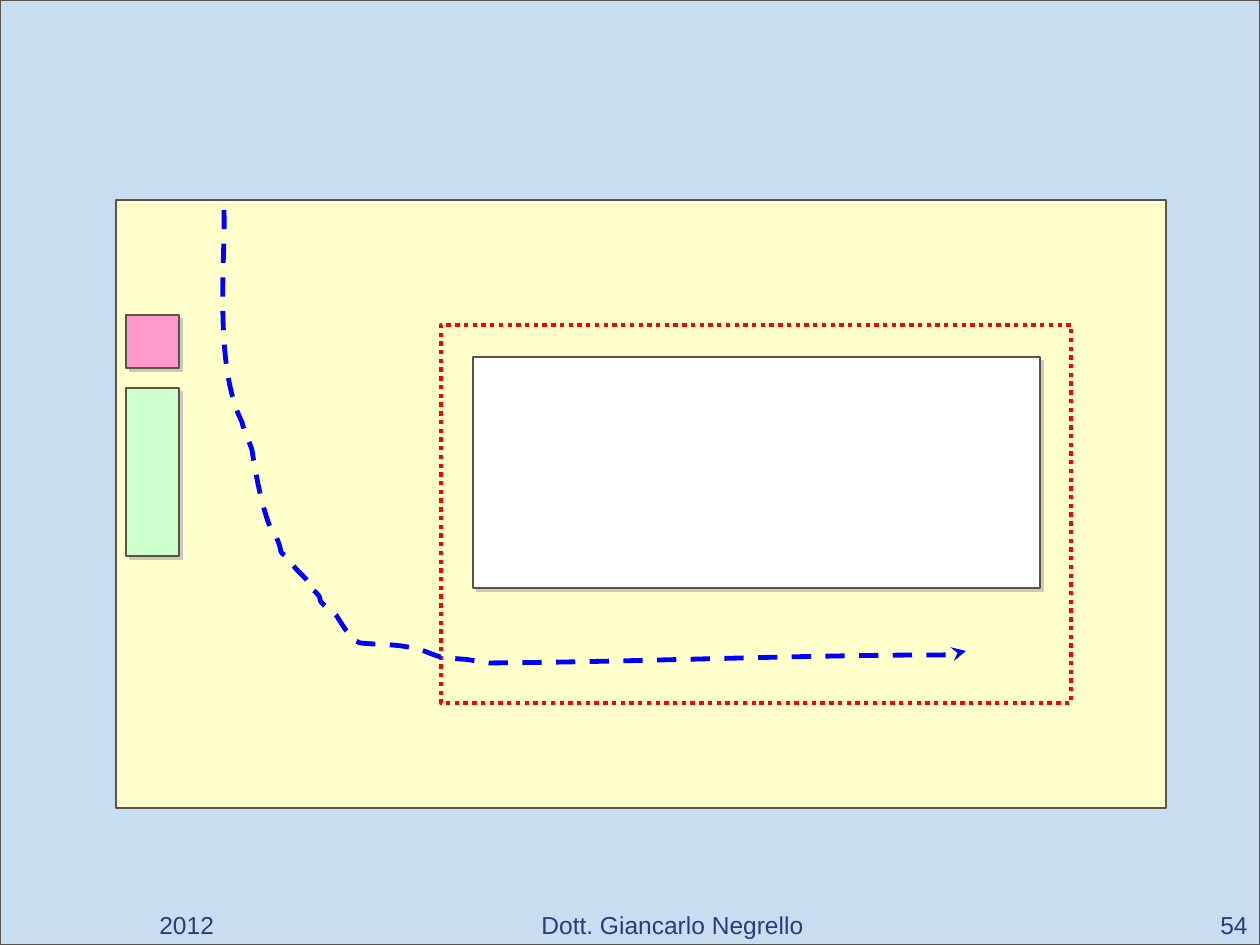
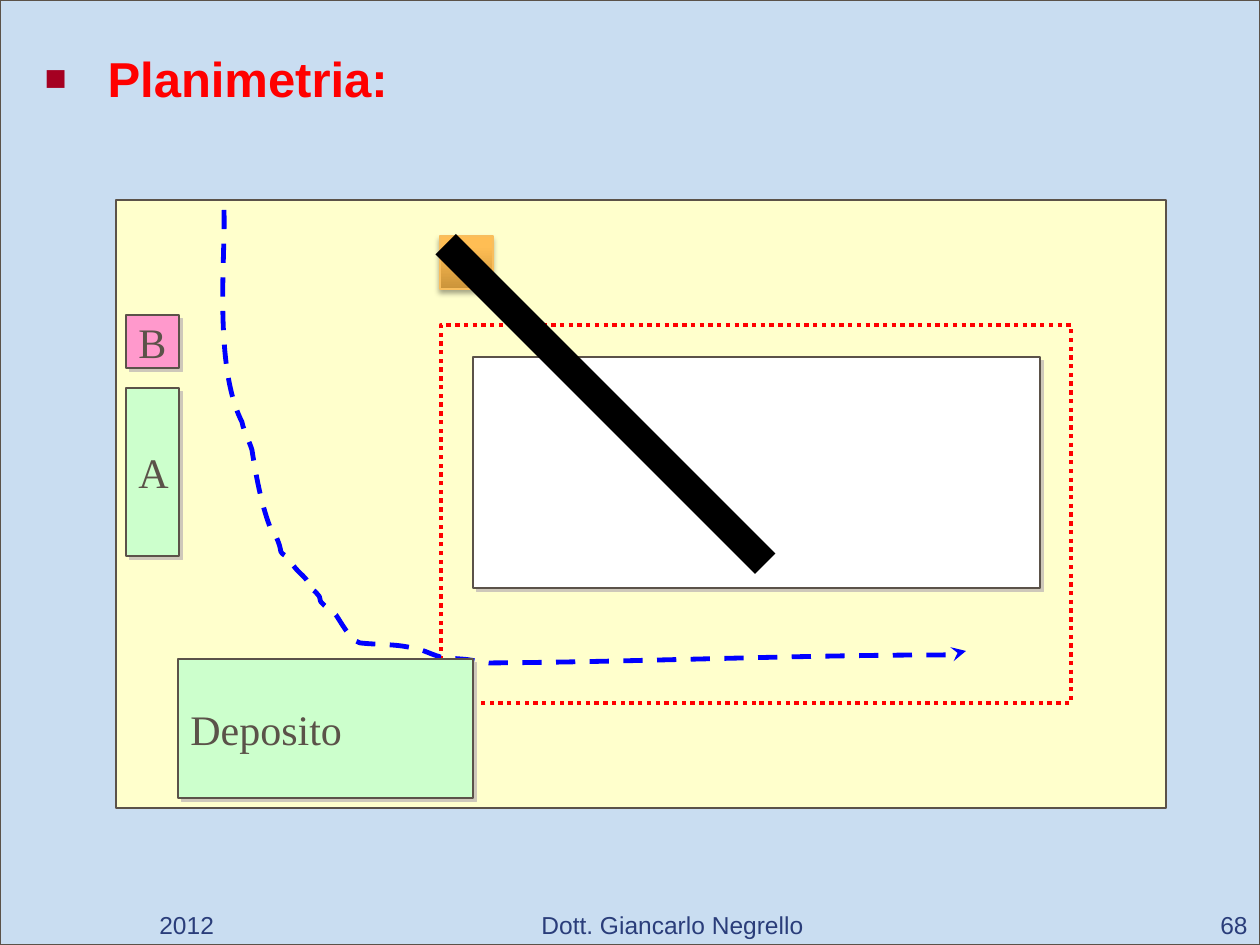
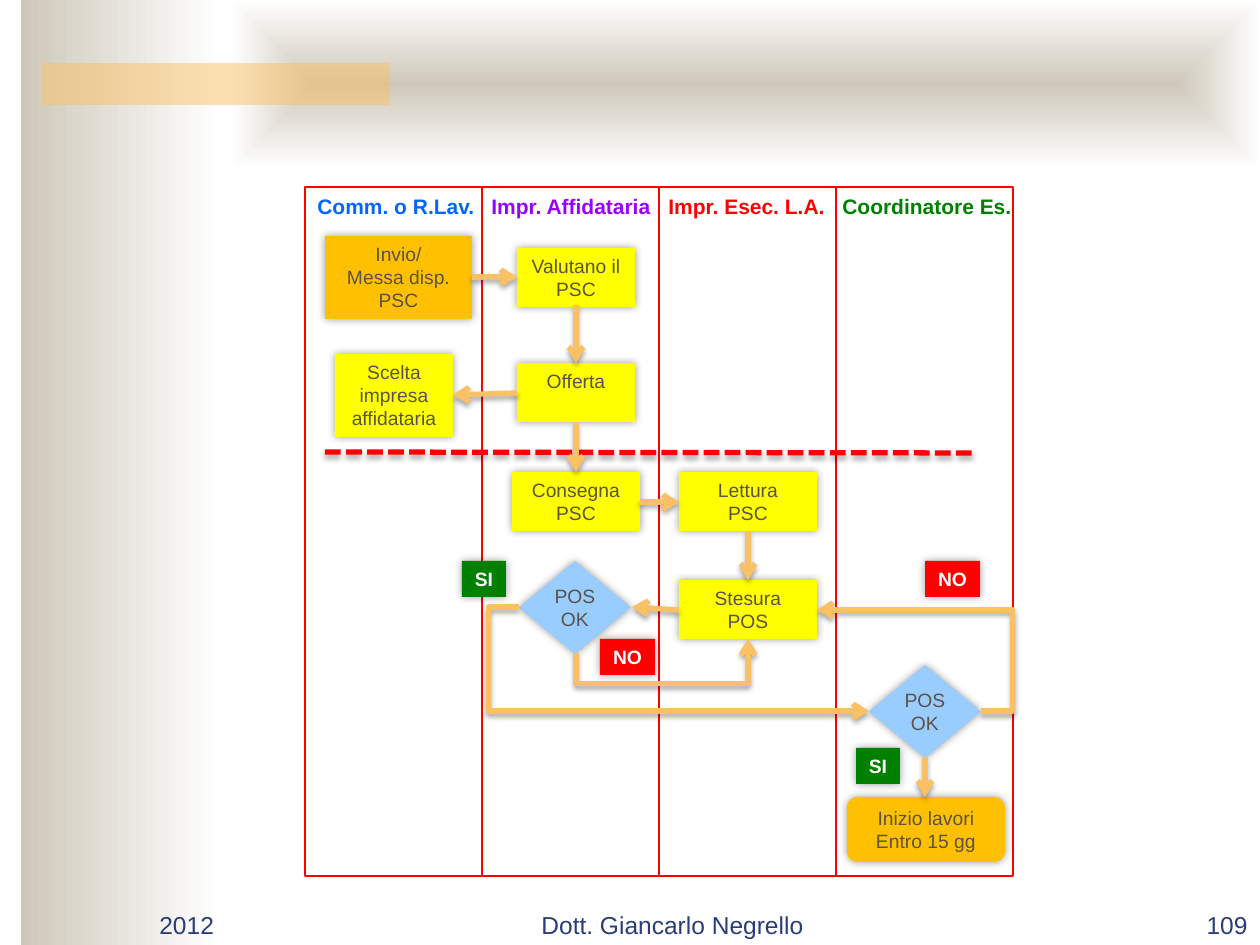
import pptx
import pptx.dml.color
import pptx.enum.dml
import pptx.enum.shapes
import pptx.enum.text
import pptx.oxml.ns
import pptx.util
from lxml import etree

PX = 914400 / 126
COLOURS = {
    "sky": "C9DDF1", "brown": "5B5249", "cream": "FFFFCC", "white": "FFFFFF",
    "red": "FF0000", "blue": "0000FF", "pink": "FF99CC", "mint": "CCFFCC",
    "black": "000000", "navy": "2A3D7A", "crimson": "A50021", "sand": "CEC8BA",
    "orange": "FAC164", "edge": "F8BE5E", "dark gold": "CB943A", "gold": "FFBE54",
    "yellow": "FFFF00", "amber": "FFC000", "pale blue": "99CCFF", "green": "008000",
    "azure": "0066FF", "violet": "9900FF",
}
RGB = {name: pptx.dml.color.RGBColor.from_string(code) for name, code in COLOURS.items()}
# Shadow colour, opacity in percent, blur and distance in points, angle in degrees
SHADOWS = {
    "hard": ("sand", 100, 0, 2.8, 45),
    "soft": ("black", 35, 3.1, 1.8, 90),
    "glow": ("black", 40, 5, 0, 0),
}
Pt = pptx.util.Pt
qn = pptx.oxml.ns.qn
SHAPE = pptx.enum.shapes.MSO_SHAPE
CONNECTOR = pptx.enum.shapes.MSO_CONNECTOR
DASH = pptx.enum.dml.MSO_LINE
ALIGN = pptx.enum.text.PP_ALIGN
ANCHOR = pptx.enum.text.MSO_ANCHOR


def add_shadow(item, name=None):
    effects = etree.SubElement(item.element.spPr, qn("a:effectLst"))
    if name:
        colour, opacity, blur, distance, angle = SHADOWS[name]
        shadow = etree.SubElement(
            effects, qn("a:outerShdw"), blurRad=str(Pt(blur)), dist=str(Pt(distance)),
            dir=str(angle * 60000), algn="ctr", rotWithShape="0")
        tint = etree.SubElement(shadow, qn("a:srgbClr"), val=COLOURS[colour])
        etree.SubElement(tint, qn("a:alpha"), val=str(opacity * 1000))


def add_box(page, place, fill=None, line=None, width=0.75, shadow=None, kind=SHAPE.RECTANGLE,
            text="", size=11, font="Arial", colour="brown", bold=False,
            align=ALIGN.CENTER, anchor=ANCHOR.TOP, wrap=True):
    box = page.shapes.add_shape(kind, *[round(value * PX) for value in place])
    if isinstance(fill, tuple):
        box.fill.gradient()
        for stop, shade in zip(box.fill.gradient_stops, fill):
            stop.color.rgb = RGB[shade]
    elif fill:
        box.fill.solid()
        box.fill.fore_color.rgb = RGB[fill]
    else:
        box.fill.background()
    if line:
        box.line.color.rgb = RGB[line]
        box.line.width = Pt(width)
    else:
        box.line.fill.background()
    add_shadow(box, shadow)
    if text:
        frame = box.text_frame
        frame.text = text
        frame.word_wrap = wrap
        frame.vertical_anchor = anchor
        for para in frame.paragraphs:
            para.alignment = align
            for span in para.runs:
                span.font.size = Pt(size)
                span.font.name = font
                span.font.bold = bold
                span.font.color.rgb = RGB[colour]
    return box


deck = pptx.Presentation()
deck.slide_width = round(1260 * PX)
deck.slide_height = round(945 * PX)

# Site plans: the start of the route, then three points for each curve, then the tip
ROUTE = [
    (224, 210),
    (226, 252), (213, 365), (242, 422), (244, 432), (249, 440), (252, 450),
    (256, 475), (261, 503), (270, 527), (271, 529), (273, 532), (275, 534),
    (286, 558), (275, 549), (289, 558), (295, 571), (301, 572), (309, 583),
    (315, 601), (306, 580), (319, 596), (320, 597), (320, 601), (321, 602),
    (325, 607), (331, 610), (336, 615), (341, 622), (350, 640), (360, 643),
    (378, 645), (396, 644), (412, 648), (423, 649), (433, 656), (445, 658),
    (476, 660), (461, 659), (489, 663), (641, 662), (796, 655), (949, 655),
    (966, 651),
]
PLAN_LABEL = {"size": 24, "font": "Times New Roman", "align": ALIGN.LEFT,
              "anchor": ANCHOR.MIDDLE, "wrap": False}

for layout, small_label, tall_label in ((6, "", ""), (1, "B", "A")):
    page = deck.slides.add_slide(deck.slide_layouts[layout])
    sheet = add_box(page, (0, 0, 1260, 945), "sky", "brown")
    page.shapes.element.insert(2, sheet.element)
    add_box(page, (116, 200, 1050, 608), "cream", "brown", 1.25)
    add_box(page, (473, 357, 567, 231), "white", "brown", shadow="hard")
    fence = add_box(page, (441, 325, 630, 378), line="red", width=2.5)
    fence.line.dash_style = DASH.ROUND_DOT

    builder = page.shapes.build_freeform(*ROUTE[0], scale=PX)
    builder.add_line_segments(ROUTE[1:], close=False)
    route = builder.convert_to_shape()
    steps = route.element.xpath(".//a:lnTo")
    for curve, second, end in zip(steps[0::3], steps[1::3], steps[2::3]):
        curve.tag = qn("a:cubicBezTo")
        for step in (second, end):
            curve.append(step[0])
            step.getparent().remove(step)
    route.fill.background()
    route.line.color.rgb = RGB["blue"]
    route.line.width = Pt(2.75)
    route.line.dash_style = DASH.DASH
    etree.SubElement(route.element.spPr.find(qn("a:ln")), qn("a:tailEnd"), type="stealth")
    add_shadow(route)

    add_box(page, (126, 315, 53, 53), "pink", "brown", shadow="hard",
            text=small_label, **PLAN_LABEL)
    add_box(page, (126, 388, 53, 168), "mint", "brown", shadow="hard",
            text=tall_label, **PLAN_LABEL)

# Second plan: heading, crane and store
title = page.shapes.title.element
title.getparent().remove(title)
body = page.placeholders[1]
body.left, body.top, body.width, body.height = [round(v * PX) for v in (32, 42, 1187, 815)]
para = body.text_frame.paragraphs[0]
para.text = "Planimetria:"
para.space_before = Pt(0)
settings = para._p.get_or_add_pPr()
settings.set("marL", str(round(63 * PX)))
settings.set("indent", str(round(-63 * PX)))
tint = etree.SubElement(settings, qn("a:buClr"))
etree.SubElement(tint, qn("a:srgbClr"), val=COLOURS["crimson"])
etree.SubElement(settings, qn("a:buSzPct"), val="75000")
etree.SubElement(settings, qn("a:buFont"), typeface="Arial")
etree.SubElement(settings, qn("a:buChar"), char="■")
span = para.runs[0]
span.font.size = Pt(28)
span.font.name = "Arial"
span.font.bold = True
span.font.color.rgb = RGB["red"]

crane_base = add_box(page, (440, 236, 53, 53), ("dark gold", "gold"), "edge", shadow="soft")
crane_base.fill.gradient_angle = 90
crane_base.fill.gradient_stops[1].position = 0.8
crane_arm = add_box(page, (591, 178, 29, 452), "black")
crane_arm.rotation = 315
add_box(page, (178, 659, 295, 139), "mint", "brown", shadow="hard",
        text="Deposito", **PLAN_LABEL)

# Flow chart: template bands
page = deck.slides.add_slide(deck.slide_layouts[6])
side_band = add_box(page, (21, 0, 199, 945), ("sand", "white"))
side_band.fill.gradient_angle = 0
top_band = add_box(page, (231, 0, 1029, 168), ("sand", "white"))
gradient = top_band.element.spPr.find(qn("a:gradFill"))
gradient.remove(gradient.find(qn("a:lin")))
spread = etree.SubElement(gradient, qn("a:path"), path="shape")
etree.SubElement(spread, qn("a:fillToRect"), l="50000", t="50000", r="50000", b="50000")
strip = add_box(page, (42, 63, 347, 42), "orange")
tint = strip.element.spPr.find(qn("a:solidFill"))[0]
etree.SubElement(tint, qn("a:alpha"), val="50000")

# Lanes and their headings
for lane in range(4):
    add_box(page, (305 + 177 * lane, 187, 177, 689), "white", "red", 1.5)
headings = page.shapes.add_textbox(*[round(v * PX) for v in (305, 187, 722, 38)])
headings.text_frame.word_wrap = True
para = headings.text_frame.paragraphs[0]
stops = etree.SubElement(para._p.get_or_add_pPr(), qn("a:tabLst"))
for stop in (174, 351, 525):
    etree.SubElement(stops, qn("a:tab"), pos=str(round(stop * PX)), algn="l")
for heading, colour in (("Comm. o R.Lav.\t", "azure"), ("Impr. Affidataria\t", "violet"),
                        ("Impr. Esec. L.A.\t", "red"), ("Coordinatore Es.", "green")):
    span = para.add_run()
    span.text = heading
    span.font.size = Pt(12)
    span.font.name = "Arial"
    span.font.bold = True
    span.font.color.rgb = RGB[colour]

# Steps
for place, fill, text in (
    ((679, 472, 138, 59), "yellow", "Lettura\nPSC"),
    ((325, 236, 147, 83), "amber", "Invio/\nMessa disp.\nPSC"),
    ((512, 472, 128, 59), "yellow", "Consegna\nPSC"),
    ((517, 363, 118, 59), "yellow", "Offerta"),
    ((517, 248, 118, 59), "yellow", "Valutano il PSC"),
    ((335, 354, 118, 83), "yellow", "Scelta impresa affidataria"),
    ((679, 580, 138, 59), "yellow", "Stesura\nPOS"),
):
    add_box(page, place, fill, shadow="glow", text=text)
add_box(page, (847, 797, 158, 65), "amber", shadow="glow",
        kind=SHAPE.FLOWCHART_ALTERNATE_PROCESS, text="Inizio lavori\nEntro 15 gg")

# Decisions and their answers
for left, top in ((519, 561), (869, 665)):
    decision = add_box(page, (left, top, 112, 93), "pale blue", shadow="glow",
                       kind=SHAPE.FLOWCHART_DECISION, text="POS\nOK")
    frame = decision.text_frame
    frame.margin_left = frame.margin_top = frame.margin_right = frame.margin_bottom = 0
for left, top, answer in ((925, 561, "NO"), (600, 639, "NO"), (856, 748, "SI"), (462, 561, "SI")):
    width, fill = (55, "red") if answer == "NO" else (44, "green")
    add_box(page, (left, top, width, 36), fill, shadow="glow", text=answer,
            colour="white", bold=True, wrap=False)

# Lines: start, end, and for an elbow the axis and position of its middle part
for (x1, y1), (x2, y2), axis, middle in (
    ((325, 452), (974, 453), "phase", None),
    ((472, 277), (517, 277), None, None),
    ((576, 305), (576, 363), None, None),
    ((517, 393), (453, 395), None, None),
    ((640, 502), (679, 502), None, None),
    ((748, 531), (748, 580), None, None),
    ((679, 610), (632, 607), None, None),
    ((576, 653), (748, 639), "y", 684),
    ((519, 607), (869, 711), "x", 489),
    ((925, 757), (925, 797), None, None),
    ((981, 711), (817, 610), "x", 1013),
    ((576, 423), (576, 472), None, None),
):
    if axis == "y":
        bend = (middle - y1) / (y2 - y1)
        centre_x, centre_y = (x1 + x2) / 2, (y1 + y2) / 2
        half_x, half_y = (x1 - x2) / 2, (y1 - y2) / 2
        x1, y1 = centre_x + half_y, centre_y - half_x
        x2, y2 = centre_x - half_y, centre_y + half_x
    elif axis == "x":
        bend = (middle - x1) / (x2 - x1)
    style = CONNECTOR.ELBOW if middle else CONNECTOR.STRAIGHT
    link = page.shapes.add_connector(style, *[round(v * PX) for v in (x1, y1, x2, y2)])
    if axis == "y":
        link.element.spPr.find(qn("a:xfrm")).set("rot", "5400000")
    if middle:
        values = link.element.spPr.find(qn("a:prstGeom")).find(qn("a:avLst"))
        etree.SubElement(values, qn("a:gd"), name="adj1", fmla=f"val {round(bend * 100000)}")
    link.line.width = Pt(3)
    if axis == "phase":
        link.line.color.rgb = RGB["red"]
        link.line.dash_style = DASH.SQUARE_DOT
        link.element.spPr.find(qn("a:ln")).find(qn("a:prstDash")).set("val", "sysDash")
    else:
        link.line.color.rgb = RGB["orange"]
        etree.SubElement(link.element.spPr.find(qn("a:ln")), qn("a:tailEnd"), type="arrow")
    add_shadow(link, "soft")

# Footers
for page, number in zip(deck.slides, ("54", "68", "109")):
    for left, width, text, align in (
        (147, 262, "2012", ALIGN.LEFT),
        (1134, 126, number, ALIGN.RIGHT),
        (473, 399, "Dott. Giancarlo Negrello", ALIGN.CENTER),
    ):
        footer = page.shapes.add_textbox(*[round(v * PX) for v in (left, 883, width, 63)])
        footer.text_frame.text = text
        footer.text_frame.word_wrap = True
        footer.text_frame.vertical_anchor = ANCHOR.BOTTOM
        para = footer.text_frame.paragraphs[0]
        para.alignment = align
        span = para.runs[0]
        span.font.size = Pt(14)
        span.font.name = "Arial"
        span.font.color.rgb = RGB["navy"]

deck.save("out.pptx")
